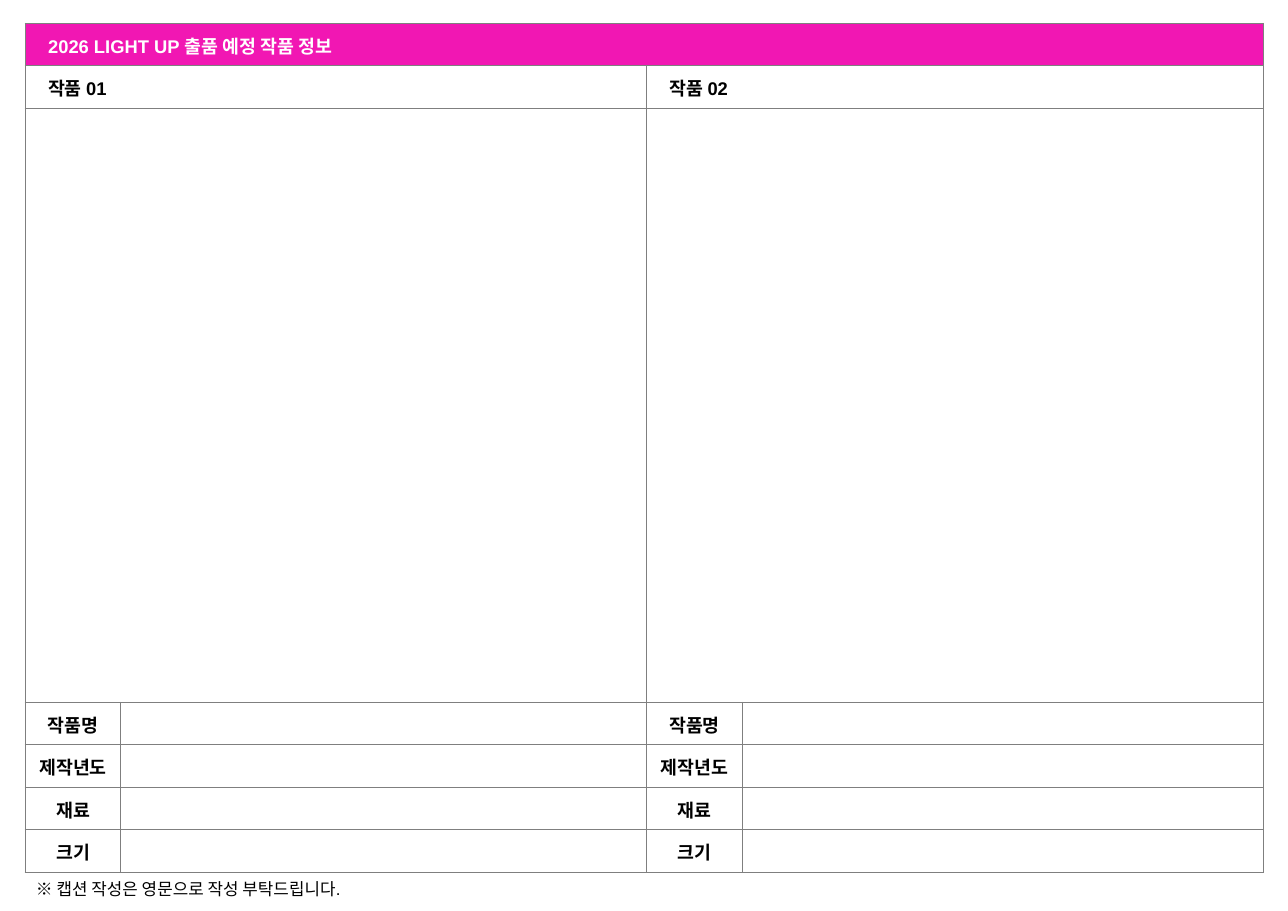
from lxml.etree import SubElement
from pptx import Presentation
from pptx.dml.color import RGBColor
from pptx.enum.text import MSO_ANCHOR, PP_ALIGN
from pptx.oxml.ns import qn
from pptx.util import Cm, Pt

COLORS = {"banner": "F117B3", "paper": "FFFFFF", "ink": "000000", "rule": "7F7F7F"}
COLUMN_WIDTHS = [2.21, 12.12, 2.21, 12.01]
ROW_HEIGHTS = [0.98, 0.98, 13.69, 0.98, 0.98, 0.98, 0.98]
CAPTION_LABELS = ["작품명", "제작년도", "재료", "크기"]
LEFT, TOP = 0.58, 0.54
CELL_MARGIN, HEADING_MARGIN = 0.03, 0.53


def write(frame, text, size=12, bold=True, color="ink", align=PP_ALIGN.LEFT):
    paragraph = frame.paragraphs[0]
    paragraph.alignment = align
    run = paragraph.add_run()
    run.text = text
    run.font.name = "Arial"
    run.font.size = Pt(size)
    run.font.bold = bold
    run.font.color.rgb = RGBColor.from_string(COLORS[color])


def style_cell(cell, fill):
    """Set thin margins, ruled borders and a solid fill."""
    cell.margin_left = cell.margin_right = cell.margin_top = Cm(CELL_MARGIN)
    cell.margin_bottom = 0
    cell.vertical_anchor = MSO_ANCHOR.MIDDLE
    properties = cell._tc.get_or_add_tcPr()
    for side in ("a:lnL", "a:lnR", "a:lnT", "a:lnB"):
        border = SubElement(properties, qn(side), w=str(Pt(0.75)))
        solid = SubElement(border, qn("a:solidFill"))
        SubElement(solid, qn("a:srgbClr"), val=COLORS["rule"])
    cell.fill.solid()
    cell.fill.fore_color.rgb = RGBColor.from_string(COLORS[fill])


presentation = Presentation()
presentation.slide_width = Cm(29.7)
presentation.slide_height = Cm(21)
slide = presentation.slides.add_slide(presentation.slide_layouts[6])

form = slide.shapes.add_table(
    len(ROW_HEIGHTS), len(COLUMN_WIDTHS), Cm(LEFT), Cm(TOP),
    Cm(sum(COLUMN_WIDTHS)), Cm(sum(ROW_HEIGHTS))).table
form.first_row = form.horz_banding = False
for column, width in zip(form.columns, COLUMN_WIDTHS):
    column.width = Cm(width)
for row_index, (row, height) in enumerate(zip(form.rows, ROW_HEIGHTS)):
    row.height = Cm(height)
    for cell in row.cells:
        style_cell(cell, "banner" if row_index == 0 else "paper")

banner = form.cell(0, 0)
banner.merge(form.cell(0, 3))
banner.margin_left = Cm(HEADING_MARGIN)
write(banner.text_frame, "2026 LIGHT UP 출품 예정 작품 정보", color="paper")

for number, first_column in enumerate((0, 2), start=1):
    heading = form.cell(1, first_column)
    artwork_area = form.cell(2, first_column)
    heading.merge(form.cell(1, first_column + 1))
    artwork_area.merge(form.cell(2, first_column + 1))
    heading.margin_left = Cm(HEADING_MARGIN)
    write(heading.text_frame, f"작품 {number:02d}")
    for row_index, label in enumerate(CAPTION_LABELS, start=3):
        write(form.cell(row_index, first_column).text_frame, label, align=PP_ALIGN.CENTER)

caption_note = slide.shapes.add_textbox(Cm(LEFT), Cm(20.12), Cm(17.5), Cm(0.73)).text_frame
caption_note.word_wrap = True
write(caption_note, "※ 캡션 작성은 영문으로 작성 부탁드립니다.", size=11, bold=False)

presentation.save("out.pptx")
